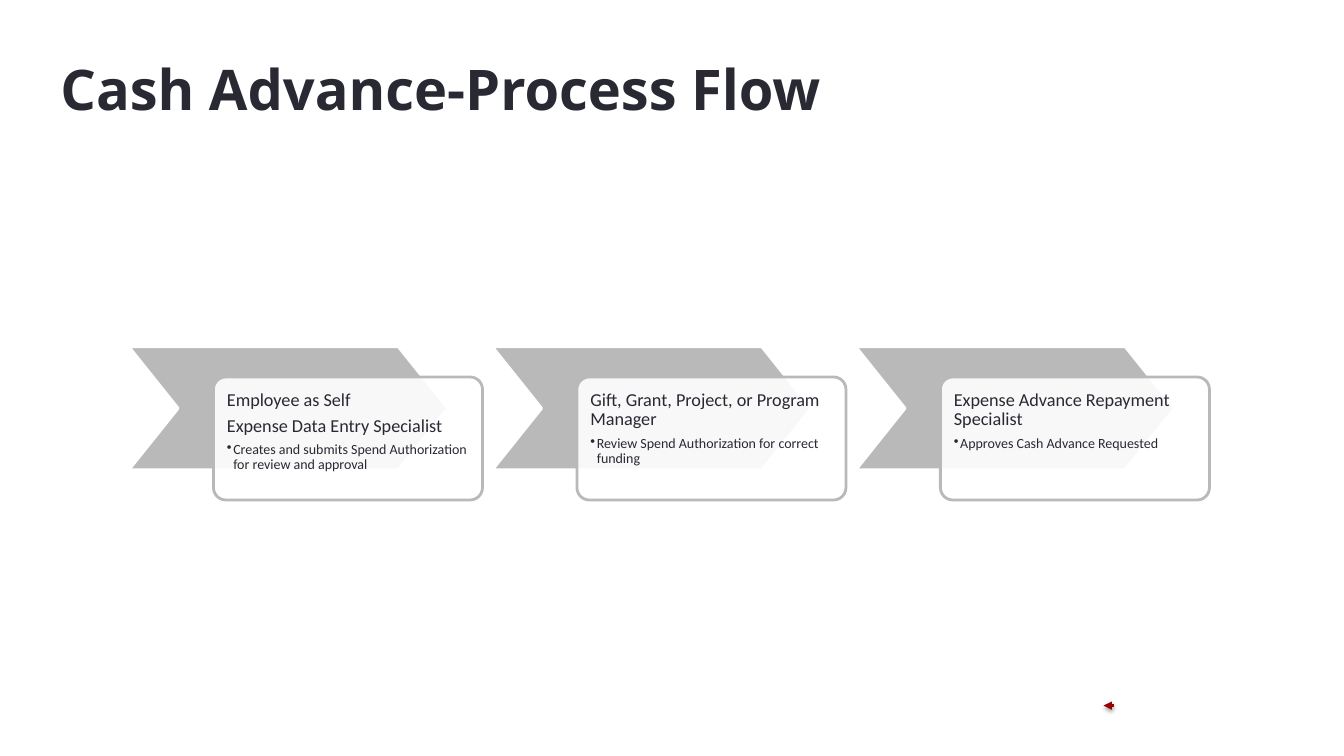
from dataclasses import dataclass

from lxml.etree import SubElement
from pptx import Presentation
from pptx.dml.color import RGBColor as Rgb
from pptx.enum.shapes import MSO_CONNECTOR as Connector, MSO_SHAPE as Preset
from pptx.enum.text import MSO_ANCHOR as Anchor, MSO_AUTO_SIZE as AutoSize, PP_ALIGN as Align
from pptx.oxml import parse_xml
from pptx.oxml.ns import nsdecls, qn
from pptx.shapes.autoshape import Shape
from pptx.slide import Slide
from pptx.util import Cm, Pt


@dataclass(frozen=True)
class Theme:
    ink: Rgb = Rgb(0x29, 0x29, 0x34)
    grey: Rgb = Rgb(0xB9, 0xB9, 0xB9)
    white: Rgb = Rgb(0xFF, 0xFF, 0xFF)
    red: Rgb = Rgb(0x99, 0x00, 0x00)
    title_font: str = "Noto Sans"
    body_font: str = "Calibri"
    title_size: Pt = Pt(40)
    role_size: Pt = Pt(13)
    task_size: Pt = Pt(10)
    line_width: Pt = Pt(2)
    line_spacing: float = 0.9


@dataclass(frozen=True)
class Step:
    roles: tuple[str, ...]
    task: str


THEME = Theme()
STEPS = (
    Step(("Employee as Self", "Expense Data Entry Specialist"),
         "Creates and submits Spend Authorization for review and approval"),
    Step(("Gift, Grant, Project, or Program Manager",),
         "Review Spend Authorization for correct funding"),
    Step(("Expense Advance Repayment Specialist",),
         "Approves Cash Advance Requested"),
)
FIRST_LEFT, STEP_PITCH = 3.25, 9.16
CHEVRON_TOP, CHEVRON_WIDTH, STEP_HEIGHT = 8.74, 8.03, 3.1
CARD_SHIFT, CARD_TOP, CARD_WIDTH = 2.13, 9.5, 6.78


def add_title(slide: Slide) -> None:
    title = slide.shapes.title
    title.left, title.top, title.width, title.height = Cm(1.27), Cm(1.27), Cm(29.21), Cm(2.11)
    frame = title.text_frame
    frame.text = "Cash Advance-Process Flow"
    frame.auto_size = AutoSize.NONE
    frame.vertical_anchor = Anchor.MIDDLE
    heading = frame.paragraphs[0]
    heading.alignment = Align.LEFT
    heading.line_spacing = THEME.line_spacing
    font = heading.runs[0].font
    font.name, font.size, font.bold = THEME.title_font, THEME.title_size, True
    font.color.rgb = THEME.ink


def add_block(slide: Slide, preset: Preset, left: float, top: float, width: float,
              rounding: float, fill: Rgb, outline: Rgb) -> Shape:
    block = slide.shapes.add_shape(preset, Cm(left), Cm(top), Cm(width), Cm(STEP_HEIGHT))
    block.adjustments[0] = rounding
    block.shadow.inherit = False
    block.fill.solid()
    block.fill.fore_color.rgb = fill
    block.line.color.rgb = outline
    block.line.width = THEME.line_width
    return block


def write_step(card: Shape, step: Step) -> None:
    frame = card.text_frame
    frame.text = "\n".join((*step.roles, step.task))
    frame.word_wrap = True
    frame.vertical_anchor = Anchor.TOP
    frame.margin_left = frame.margin_right = Cm(0.25)
    frame.margin_top = frame.margin_bottom = Cm(0.25)
    *roles, task = frame.paragraphs

    task.level = 1
    properties = task._p.get_or_add_pPr()
    properties.set("marL", str(Cm(0.16)))
    properties.set("indent", str(-Cm(0.16)))
    SubElement(properties, qn("a:buChar"), char="•")

    for paragraph in frame.paragraphs:
        is_task = paragraph.level == 1
        paragraph.alignment = Align.LEFT
        paragraph.line_spacing = THEME.line_spacing
        paragraph.space_after = Pt(1.5) if is_task else Pt(4.5)
        font = paragraph.runs[0].font
        font.name = THEME.body_font
        font.size = THEME.task_size if is_task else THEME.role_size
        font.color.rgb = THEME.ink


def add_step(slide: Slide, left: float, step: Step) -> None:
    add_block(slide, Preset.CHEVRON, left, CHEVRON_TOP, CHEVRON_WIDTH,
              0.4, THEME.grey, THEME.white)
    card = add_block(slide, Preset.ROUNDED_RECTANGLE, left + CARD_SHIFT, CARD_TOP, CARD_WIDTH,
                     0.1, THEME.white, THEME.grey)
    fill_color = card.element.spPr.find(qn("a:solidFill")).find(qn("a:srgbClr"))
    SubElement(fill_color, qn("a:alpha"), val="90000")
    write_step(card, step)


def add_back_arrow(slide: Slide) -> None:
    arrow = slide.shapes.add_connector(
        Connector.STRAIGHT, Cm(28.07), Cm(17.78), Cm(27.81), Cm(17.78))
    arrow.line.color.rgb = THEME.red
    arrow.line.width = THEME.line_width
    SubElement(arrow.line._get_or_add_ln(), qn("a:tailEnd"), type="triangle")
    arrow.element.spPr.append(parse_xml(
        f'<a:effectLst {nsdecls("a")}>'
        f'<a:outerShdw blurRad="{Pt(3.1)}" dist="{Pt(1.6)}" dir="5400000" rotWithShape="0">'
        '<a:srgbClr val="000000"><a:alpha val="38000"/></a:srgbClr>'
        '</a:outerShdw></a:effectLst>'))


def main() -> None:
    deck = Presentation()
    deck.slide_width, deck.slide_height = Cm(33.87), Cm(19.05)
    slide = deck.slides.add_slide(deck.slide_layouts.get_by_name("Title Only"))
    add_back_arrow(slide)
    add_title(slide)
    for index, step in enumerate(STEPS):
        add_step(slide, FIRST_LEFT + index * STEP_PITCH, step)
    deck.save("out.pptx")


if __name__ == "__main__":
    main()
